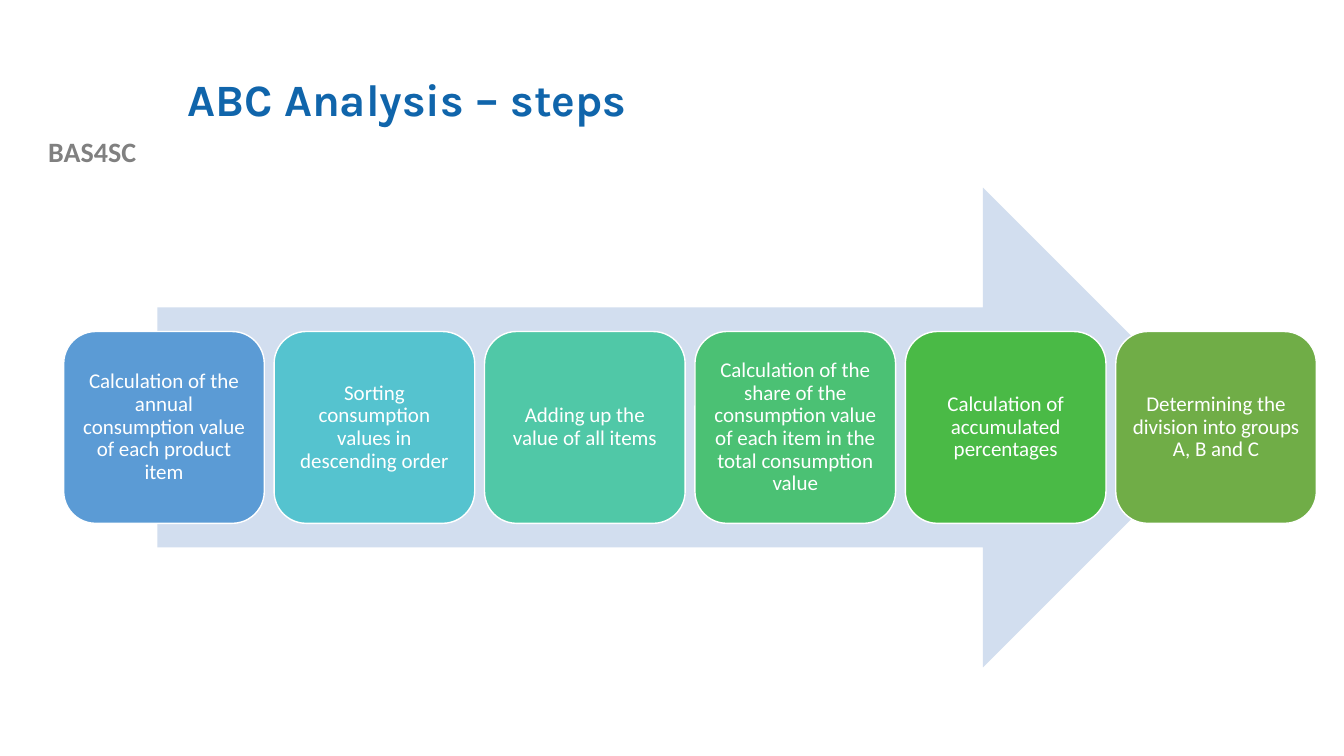
from pptx import Presentation
from pptx.dml.color import RGBColor
from pptx.enum.shapes import MSO_SHAPE as Shape
from pptx.enum.text import MSO_ANCHOR as Anchor, PP_ALIGN as Align
from pptx.util import Pt

COLORS = {
    "title": "1065AB",
    "label": "808080",
    "arrow": "D2DEEF",
    "white": "FFFFFF",
    "blue": "5B9BD5",
    "cyan": "55C3CF",
    "teal": "50C8A7",
    "mint": "4BC174",
    "green": "4ABA46",
    "olive": "70AD47",
}


def write(box, text, color, align, spacing, **font_format):
    frame = box.text_frame
    frame.word_wrap = True
    frame.vertical_anchor = Anchor.MIDDLE
    para = frame.paragraphs[0]
    para.alignment = align
    para.line_spacing = spacing
    span = para.add_run()
    span.text = text
    span.font.color.rgb = RGBColor.from_string(COLORS[color])
    for name, value in font_format.items():
        setattr(span.font, name, value)


def add_filled(page, kind, left, top, width, height, color):
    shape = page.shapes.add_shape(kind, Pt(left), Pt(top), Pt(width), Pt(height))
    shape.shadow.inherit = False
    shape.fill.solid()
    shape.fill.fore_color.rgb = RGBColor.from_string(COLORS[color])
    return shape


deck = Presentation()
deck.slide_width, deck.slide_height = Pt(960), Pt(540)
page = deck.slides.add_slide(deck.slide_layouts[6])

# Project label and title
label = page.shapes.add_textbox(Pt(0), Pt(92.2), Pt(131.8), Pt(31.7))
write(label, "BAS4SC", "label", Align.CENTER, 1.0,
      name="Calibri", size=Pt(20), bold=True)
title = page.shapes.add_textbox(Pt(126.7), Pt(28.8), Pt(767.5), Pt(87.8))
write(title, "ABC Analysis – steps", "title", Align.LEFT, 0.9,
      name="Karla", size=Pt(32), bold=True)

# Background arrow
arrow = add_filled(page, Shape.RIGHT_ARROW, 112.5, 134, 761, 342.7, "arrow")
arrow.line.fill.background()

# Steps, evenly spaced along the arrow
steps = [
    ("blue", "Calculation of the annual consumption value of each product item"),
    ("cyan", "Sorting consumption values in descending order"),
    ("teal", "Adding up the value of all items"),
    ("mint", "Calculation of the share of the consumption value of each item "
             "in the total consumption value"),
    ("green", "Calculation of accumulated percentages"),
    ("olive", "Determining the division into groups A, B and C"),
]
FIRST_LEFT, STEP_PITCH = 45.5, 150.3
for index, (color, text) in enumerate(steps):
    step = add_filled(page, Shape.ROUNDED_RECTANGLE,
                      FIRST_LEFT + index * STEP_PITCH, 236.8, 143.3, 137, color)
    step.line.color.rgb = RGBColor.from_string(COLORS["white"])
    step.line.width = Pt(1)
    for side in ("left", "top", "right", "bottom"):
        setattr(step.text_frame, f"margin_{side}", Pt(4.5))
    write(step, text, "white", Align.CENTER, 0.9, name="Calibri", size=Pt(15))

deck.save("out.pptx")
